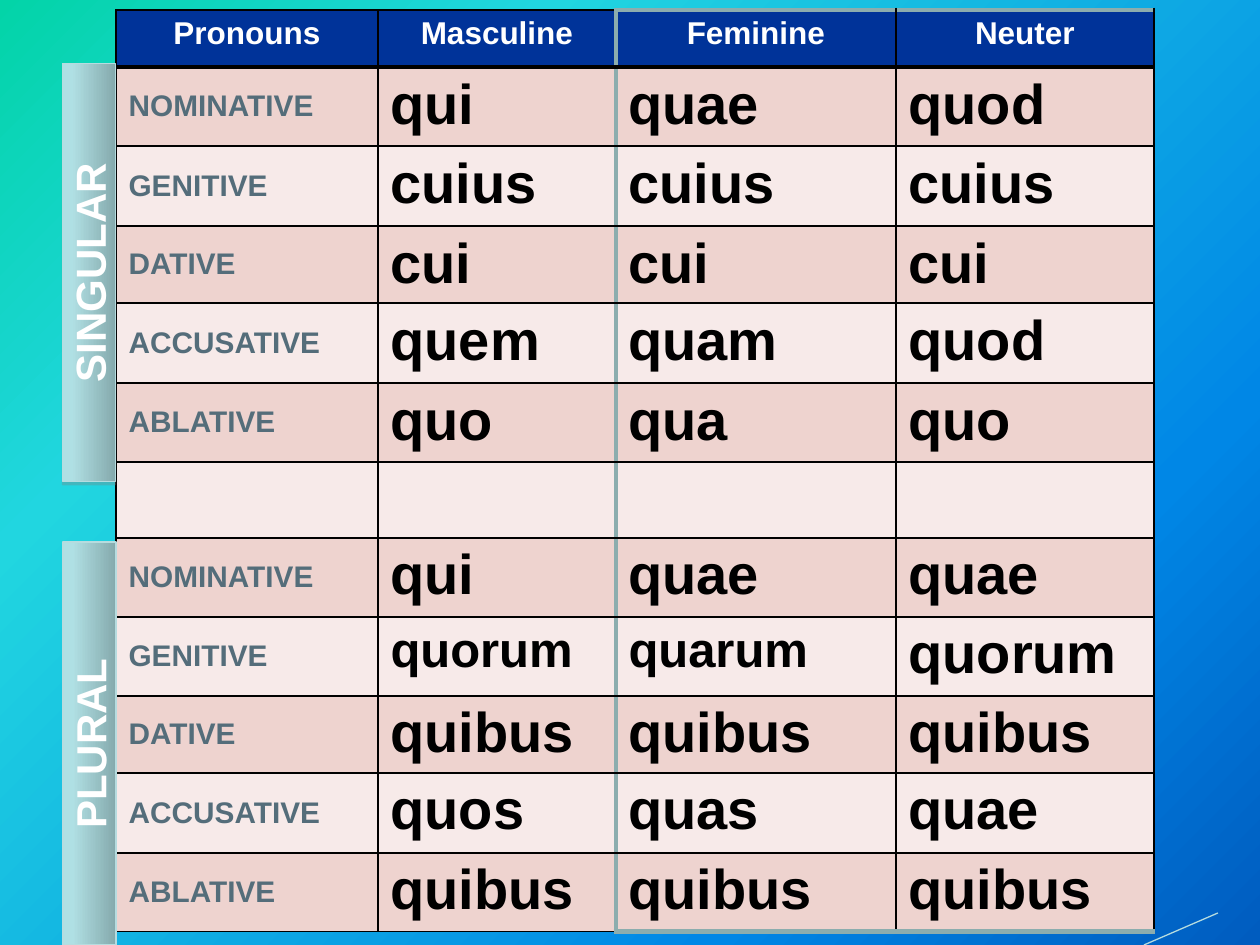
from typing import NamedTuple

import lxml.etree
import pptx
import pptx.dml.color
import pptx.enum.shapes
import pptx.enum.text
import pptx.oxml.ns
import pptx.util

PX = 914400 // 126
FONT = "Arial"
BLACK, WHITE, NAVY, TEAL = "000000", "FFFFFF", "003399", "8CADAE"
LABEL, PALE_TEAL = "546D7A", "B6DCDF"
ROW_FILLS = ("F7EAE9", "EED3CF")
THIN, THICK = 1, 3


class Stop(NamedTuple):
    percent: int
    color: str


class Sidebar(NamedTuple):
    text: str
    left: int
    top: int
    width: int
    height: int


class Row(NamedTuple):
    height: int
    texts: tuple[str, ...]
    sizes: tuple[int, ...] = (17, 32, 32, 32)


BACKGROUND_STOPS = (Stop(0, "03D4A8"), Stop(25, "21D6E0"), Stop(75, "0087E6"), Stop(100, "005CBF"))
SIDEBAR_STOPS = (Stop(0, "AFE0E4"), Stop(20, "AFDEE2"), Stop(100, "85AAAD"))
SIDEBARS = (
    Sidebar("SINGULAR", -120, 246, 418, 53),
    Sidebar("PLURAL", -112, 717, 403, 53),
)
COLUMN_WIDTHS = (262, 238, 280, 258)
ROWS = (
    Row(57, ("Pronouns", "Masculine", "Feminine", "Neuter"), (18, 18, 18, 18)),
    Row(79, ("NOMINATIVE", "qui", "quae", "quod")),
    Row(80, ("GENITIVE", "cuius", "cuius", "cuius")),
    Row(77, ("DATIVE", "cui", "cui", "cui")),
    Row(80, ("ACCUSATIVE", "quem", "quam", "quod")),
    Row(79, ("ABLATIVE", "quo", "qua", "quo")),
    Row(76, ("", "", "", "")),
    Row(79, ("NOMINATIVE", "qui", "quae", "quae")),
    Row(79, ("GENITIVE", "quorum", "quarum", "quorum"), (17, 28, 28, 32)),
    Row(77, ("DATIVE", "quibus", "quibus", "quibus")),
    Row(80, ("ACCUSATIVE", "quos", "quas", "quae")),
    Row(79, ("ABLATIVE", "quibus", "quibus", "quibus")),
)


def rgb(color: str) -> pptx.dml.color.RGBColor:
    return pptx.dml.color.RGBColor.from_string(color)


def add_element(parent, tag: str, **attributes):
    element = lxml.etree.SubElement(parent, pptx.oxml.ns.qn(tag))
    for name, value in attributes.items():
        element.set(name, str(value))
    return element


def set_gradient(fill, owner, stops: tuple[Stop, ...], angle: int) -> None:
    """Fill with several stops; the angle runs clockwise."""
    fill.gradient()
    fill.gradient_angle = 360 - angle
    stop_list = next(owner.iter(pptx.oxml.ns.qn("a:gsLst")))
    for old_stop in list(stop_list):
        stop_list.remove(old_stop)
    for stop in stops:
        element = add_element(stop_list, "a:gs", pos=stop.percent * 1000)
        add_element(element, "a:srgbClr", val=stop.color)


def write(text_frame, text: str, size: int, color: str, centered: bool) -> None:
    text_frame.text = text
    paragraph = text_frame.paragraphs[0]
    if centered:
        paragraph.alignment = pptx.enum.text.PP_ALIGN.CENTER
    for run in paragraph.runs:
        run.font.name = FONT
        run.font.size = pptx.util.Pt(size)
        run.font.bold = True
        run.font.color.rgb = rgb(color)


def set_borders(cell, row: int, column: int) -> None:
    """Thin black grid, with a thick header rule and a teal frame round columns 2 and 3."""
    teal, black = (TEAL, THICK), (BLACK, THIN)
    header_rule = (BLACK, THICK)
    framed = column >= 2
    last_row = len(ROWS) - 1
    borders = {
        "a:lnL": teal if column == 2 else black,
        "a:lnR": teal if column == 1 else black,
        "a:lnT": teal if row == 0 and framed else header_rule if row == 1 else black,
        "a:lnB": header_rule if row == 0 else teal if row == last_row and framed else black,
    }
    properties = cell._tc.get_or_add_tcPr()
    for position, (tag, (color, width)) in enumerate(borders.items()):
        line = add_element(properties, tag, w=pptx.util.Pt(width), cap="flat", cmpd="sng")
        add_element(add_element(line, "a:solidFill"), "a:srgbClr", val=color)
        add_element(line, "a:prstDash", val="solid")
        properties.insert(position, line)


def add_declension_table(slide) -> None:
    heights = [row.height for row in ROWS]
    table = slide.shapes.add_table(
        len(ROWS), len(COLUMN_WIDTHS), 116 * PX, 10 * PX,
        sum(COLUMN_WIDTHS) * PX, sum(heights) * PX,
    ).table
    table.first_row = False
    table.horz_banding = False
    for column, width in zip(table.columns, COLUMN_WIDTHS):
        column.width = width * PX
    for row_index, row in enumerate(ROWS):
        table.rows[row_index].height = row.height * PX
        is_header = row_index == 0
        for column_index, (text, size) in enumerate(zip(row.texts, row.sizes)):
            cell = table.cell(row_index, column_index)
            is_label = column_index == 0 and not is_header
            color = WHITE if is_header else LABEL if is_label else BLACK
            write(cell.text_frame, text, size, color, is_header)
            if is_label:
                cell.vertical_anchor = pptx.enum.text.MSO_ANCHOR.MIDDLE
            cell.fill.solid()
            cell.fill.fore_color.rgb = rgb(NAVY if is_header else ROW_FILLS[row_index % 2])
            set_borders(cell, row_index, column_index)


def add_sidebar(slide, sidebar: Sidebar) -> None:
    shape = slide.shapes.add_shape(
        pptx.enum.shapes.MSO_SHAPE.RECTANGLE, sidebar.left * PX, sidebar.top * PX,
        sidebar.width * PX, sidebar.height * PX,
    )
    shape.rotation = 270
    set_gradient(shape.fill, shape.element, SIDEBAR_STOPS, 90)
    shape.line.color.rgb = rgb(PALE_TEAL)
    shape.line.width = pptx.util.Pt(0.75)
    shape.shadow.inherit = False
    effects = shape.element.spPr.find(pptx.oxml.ns.qn("a:effectLst"))
    shadow = add_element(
        effects, "a:outerShdw", blurRad=0, dist=pptx.util.Pt(1.8), dir=90 * 60000, rotWithShape=0
    )
    shadow_color = add_element(shadow, "a:srgbClr", val="808080")
    add_element(shadow_color, "a:alpha", val=35000)
    shape.text_frame.vertical_anchor = pptx.enum.text.MSO_ANCHOR.MIDDLE
    write(shape.text_frame, sidebar.text, 24, WHITE, True)


def add_corner_line(slide) -> None:
    line = slide.shapes.add_connector(
        pptx.enum.shapes.MSO_CONNECTOR.STRAIGHT, 1144 * PX, 945 * PX, 1218 * PX, 913 * PX
    )
    line.line.color.rgb = rgb(PALE_TEAL)
    line.line.width = pptx.util.Pt(0.75)
    add_element(line.element.spPr, "a:effectLst")


def main() -> None:
    presentation = pptx.Presentation()
    presentation.slide_width = 1260 * PX
    presentation.slide_height = 945 * PX
    slide = presentation.slides.add_slide(presentation.slide_layouts[6])
    set_gradient(slide.background.fill, slide.element, BACKGROUND_STOPS, 45)
    add_declension_table(slide)
    for sidebar in SIDEBARS:
        add_sidebar(slide, sidebar)
    add_corner_line(slide)
    presentation.save("out.pptx")


if __name__ == "__main__":
    main()
